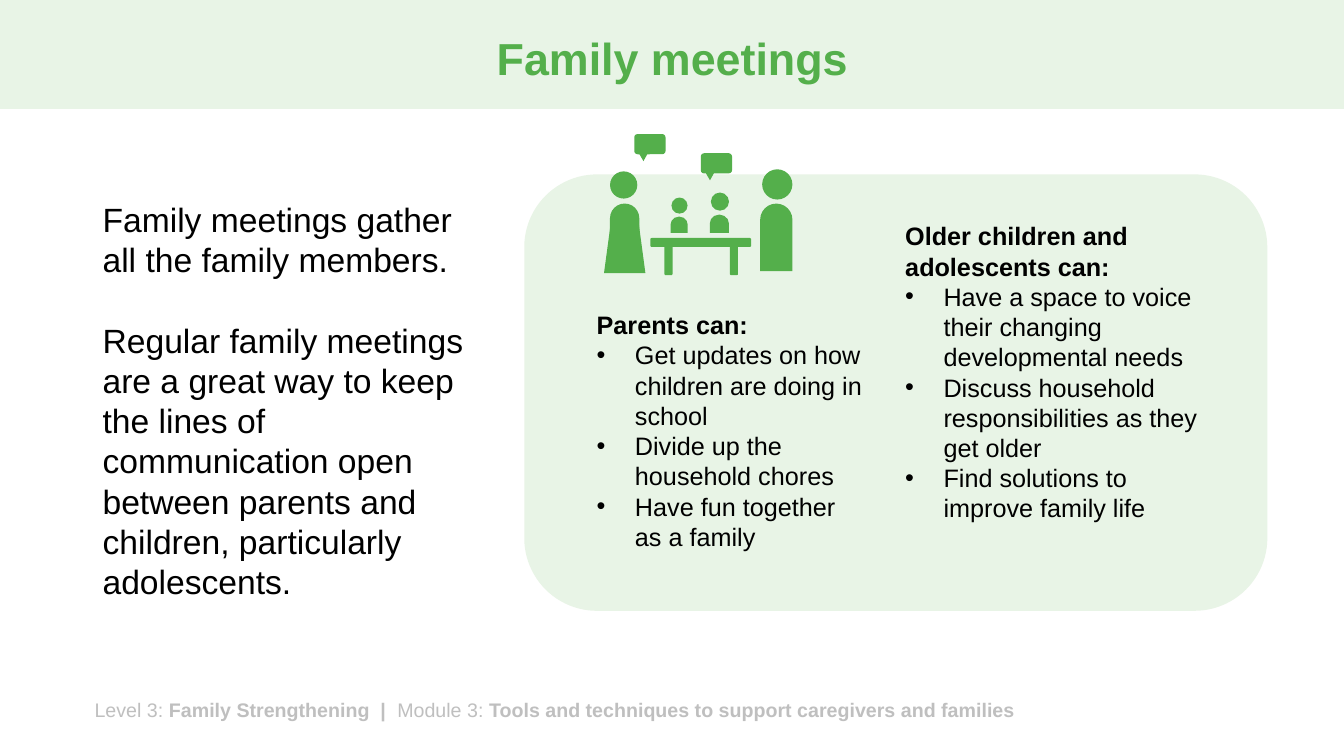
from lxml.etree import SubElement as Sub
from pptx import Presentation
from pptx.dml.color import RGBColor as Rgb
from pptx.enum.shapes import MSO_SHAPE as Kind
from pptx.enum.text import MSO_ANCHOR as Anchor, MSO_AUTO_SIZE as Fit, PP_ALIGN as Align
from pptx.oxml.ns import qn
from pptx.util import Inches, Pt

WIDE, HIGH = Inches(13.33), Inches(7.5)
HUES = {"green": "54AF4B", "pale": "E8F4E6", "gray": "BFBFBF", "black": "000000"}


def place(x, y, w, h):
    return [int(size * part / 100) for size, part in zip((WIDE, HIGH) * 2, (x, y, w, h))]


def apply(item, style):
    for key, value in style.items():
        setattr(item, key, value)


def draw(home, kind, box, hue, adjust=(), turn=0):
    form = home.shapes.add_shape(kind, *place(*box))
    apply(form, {"rotation": turn})
    apply(form.shadow, {"inherit": False})
    form.fill.solid()
    form.fill.fore_color.rgb = Rgb.from_string(HUES[hue])
    form.line.fill.background()
    for spot, value in enumerate(adjust):
        form.adjustments[spot] = value
    return form


def write(para, text, size, hue="black", bold=False):
    run = para.add_run()
    run.text = text
    apply(run.font, {"name": "Arial", "size": Pt(size), "bold": bold})
    run.font.color.rgb = Rgb.from_string(HUES[hue])


def frame(slide, box):
    body = slide.shapes.add_textbox(*place(*box)).text_frame
    apply(body, {"word_wrap": True, "auto_size": Fit.SHAPE_TO_FIT_TEXT})
    return body


def bullet(para):
    props = para._p.get_or_add_pPr()
    indent = Inches(0.38)
    props.set("marL", str(indent))
    props.set("indent", str(-indent))
    color = Sub(props, qn("a:buClr"))
    Sub(color, qn("a:srgbClr"), val=HUES["black"])
    Sub(props, qn("a:buFont"), typeface="Arial")
    Sub(props, qn("a:buChar"), char="•")


def points(slide, box, head, items):
    body = frame(slide, box)
    write(body.paragraphs[0], head, 18, bold=True)
    for item in items:
        para = body.add_paragraph()
        bullet(para)
        write(para, item, 18)


def header(slide):
    band = draw(slide, Kind.RECTANGLE, (0, 0, 100, 14.4), "pale")
    slide.shapes._spTree.insert(2, band._element)
    title = slide.shapes.title
    spot = place(6.9, 1.73, 86.27, 12.67)
    apply(title, dict(zip(("left", "top", "width", "height"), spot)))
    apply(title.text_frame, {"vertical_anchor": Anchor.MIDDLE, "word_wrap": True})
    para = title.text_frame.paragraphs[0]
    apply(para, {"alignment": Align.CENTER, "line_spacing": 0.9})
    write(para, "Family meetings", 32, "green", True)


def footer(slide):
    para = frame(slide, (6.3, 91.6, 79.67, 4.53)).paragraphs[0]
    parts = ("Level 3: ", "Family Strengthening  |  ", "Module 3: ",
             "Tools and techniques to support caregivers and families")
    for spot, text in enumerate(parts):
        write(para, text, 14, "gray", spot % 2 == 1)


def intro(slide):
    body = frame(slide, (6.9, 25.6, 29.18, 55.2))
    write(body.paragraphs[0], "Family meetings gather all the family members.", 24)
    para = body.add_paragraph()
    apply(para, {"space_before": Pt(28.8)})
    write(para, "Regular family meetings are a great way to keep the lines of "
                "communication open between parents and children, particularly "
                "adolescents.", 24)


def person(group, body, head):
    draw(group, Kind.ROUND_2_SAME_RECTANGLE, body, "green", (0.5, 0))
    draw(group, Kind.OVAL, head, "green")


def icon(slide):
    group = slide.shapes.add_group_shape()
    people = (
        ((49.89, 28.67, 1.28, 2.13), (49.96, 26.13, 1.2, 2.13)),
        ((56.56, 26.93, 2.4, 8.93), (56.71, 22.4, 2.25, 4)),
        ((45.39, 26.93, 2.18, 4.67), (45.39, 22.67, 2.03, 3.6)),
        ((52.81, 28.4, 1.43, 2.4), (52.89, 25.47, 1.35, 2.4)),
    )
    for body, head in people:
        person(group, body, head)
    draw(group, Kind.FLOWCHART_MANUAL_OPERATION, (44.94, 28, 3.08, 8.13), "green", turn=180)
    draw(group, Kind.ROUNDED_RECTANGLE, (48.39, 31.47, 7.5, 1.2), "green")
    for x in (49.44, 54.31):
        draw(group, Kind.ROUNDED_RECTANGLE, (x, 32.13, 0.6, 4.27), "green")
    for x, y in ((47.19, 17.73), (52.14, 20.27)):
        draw(group, Kind.ROUNDED_RECTANGULAR_CALLOUT, (x, y, 2.33, 2.67), "green",
             (-0.205, 0.84, 0.167))


def main():
    deck = Presentation()
    apply(deck, {"slide_width": WIDE, "slide_height": HIGH})
    slide = deck.slides.add_slide(deck.slide_layouts[5])
    header(slide)
    footer(slide)
    draw(slide, Kind.ROUNDED_RECTANGLE, (39.01, 23.07, 55.29, 57.73), "pale")
    intro(slide)
    points(slide, (43.66, 40.27, 21.23, 33.6), "Parents can:", (
        "Get updates on how children are doing in school",
        "Divide up the household chores",
        "Have fun together as a family"))
    points(slide, (66.62, 28.53, 24.46, 41.73), "Older children and adolescents can:", (
        "Have a space to voice their changing developmental needs",
        "Discuss household responsibilities as they get older",
        "Find solutions to improve family life"))
    icon(slide)
    deck.save("out.pptx")


if __name__ == "__main__":
    main()
